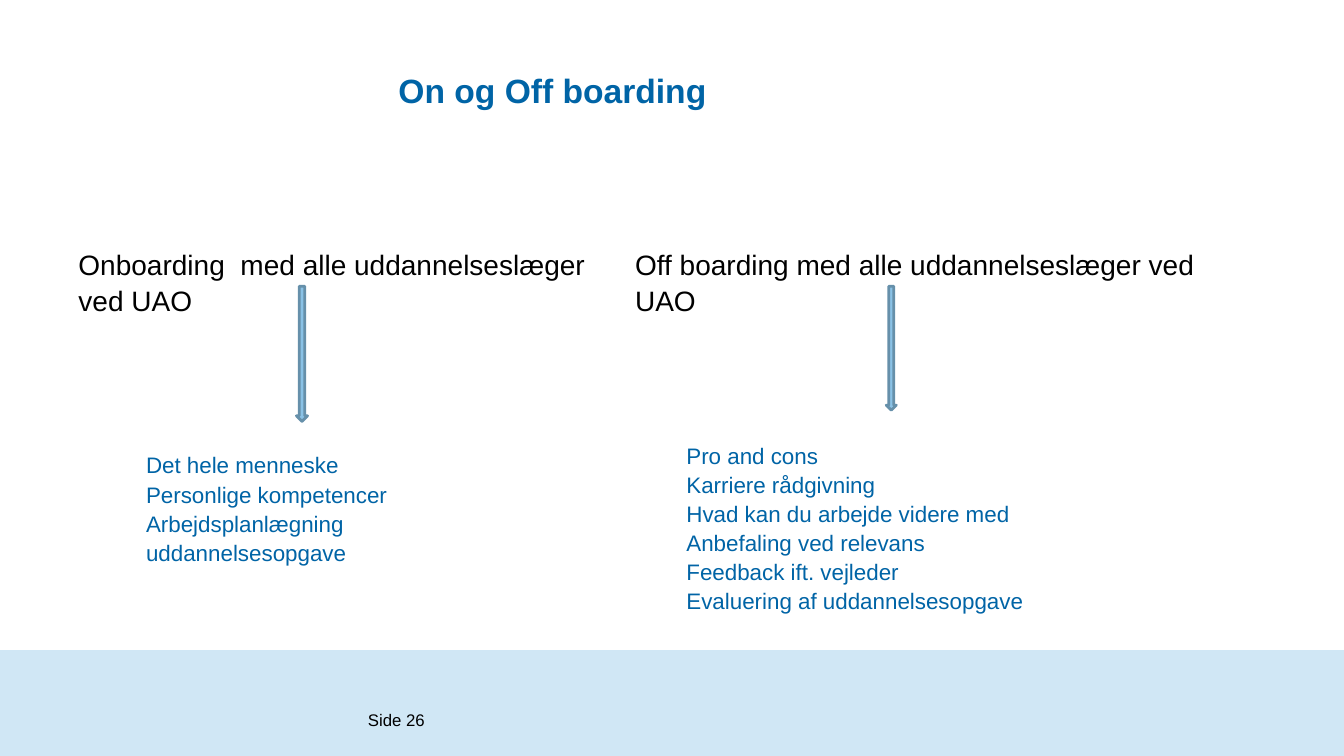
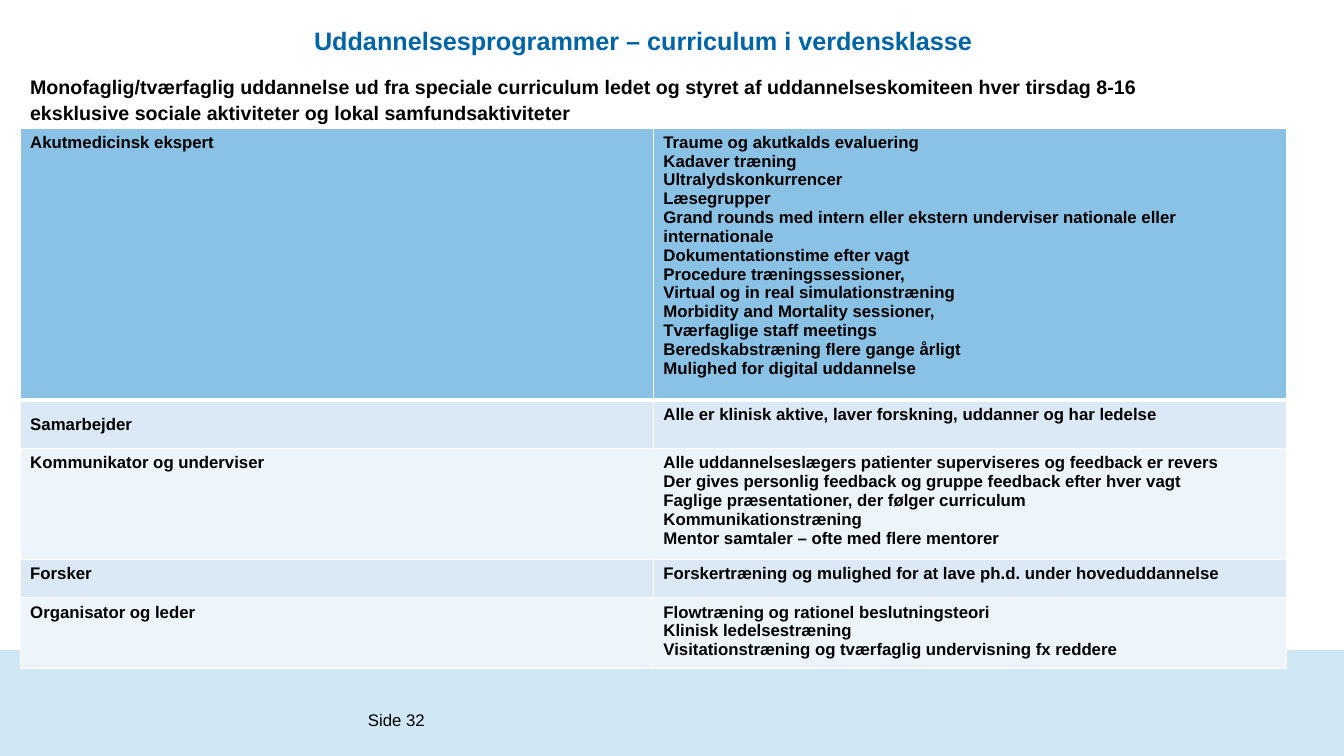
"""Build two slides on onboarding and training programmes for doctors."""
from lxml.etree import SubElement
from pptx import Presentation
from pptx.dml.color import RGBColor
from pptx.enum.shapes import MSO_SHAPE as Preset
from pptx.enum.text import MSO_ANCHOR as Anchor, PP_ALIGN as Align
from pptx.oxml import parse_xml
from pptx.oxml.ns import nsdecls, qn
from pptx.util import Emu, Pt

PX = 9144
WIDTH, HEIGHT = 1333, 750
BAND_TOP = 645


def px(length):
    """Turn a length in px into EMU."""
    return Emu(length * PX)


def color(hex_string):
    """Turn a hex string into a colour."""
    return RGBColor.from_string(hex_string)


def write(frame, text, size=12, ink="000000", bold=False, align=Align.LEFT,
          anchor=Anchor.TOP, spacing=None):
    """Fill a text frame or cell frame, one paragraph per line."""
    frame.word_wrap = True
    frame.vertical_anchor = anchor
    for index, line in enumerate(text.split("\n")):
        paragraph = frame.add_paragraph() if index else frame.paragraphs[0]
        paragraph.alignment = align
        paragraph.line_spacing = spacing
        run = paragraph.add_run()
        run.text = line
        run.font.name = Deck.FONT
        run.font.size = Pt(size)
        run.font.bold = bold
        run.font.color.rgb = color(ink)


class Deck:
    """Hold the shared style and the current slide."""

    FONT = "Arial"
    BLUE, SKY, EDGE, BAND = "0064A6", "8AC2E6", "6690AA", "D0E7F5"
    STRIPES = ("DAE9F5", "EDF4FA")
    WHITE = "FFFFFF"

    def __init__(self):
        """Start an empty presentation."""
        self.show = Presentation()
        self.show.slide_width, self.show.slide_height = px(WIDTH), px(HEIGHT)
        self.slide = None

    def new_slide(self, number):
        """Add a slide with the bottom band and its page number."""
        self.slide = self.show.slides.add_slide(self.show.slide_layouts[6])
        self.shape(Preset.RECTANGLE, 0, BAND_TOP, WIDTH, HEIGHT - BAND_TOP, self.BAND)
        self.text(f"Side {number}", 355, 704, 189, 20, anchor=Anchor.MIDDLE)

    def shape(self, preset, left, top, width, height, fill, edge=None):
        """Draw a filled preset shape, with an edge if one is given."""
        shape = self.slide.shapes.add_shape(preset, px(left), px(top), px(width), px(height))
        shape.shadow.inherit = False
        shape.fill.solid()
        shape.fill.fore_color.rgb = color(fill)
        if edge:
            shape.line.color.rgb = color(edge)
            shape.line.width = Pt(2)
        else:
            shape.line.fill.background()

    def text(self, text, left, top, width, height, **style):
        """Place a text box."""
        box = self.slide.shapes.add_textbox(px(left), px(top), px(width), px(height))
        write(box.text_frame, text, **style)

    def body(self, text, left, top, width, height, **style):
        """Place text with the looser line spacing of the body."""
        self.text(text, left, top, width, height, spacing=1.08, **style)

    def title(self, text, left, top, width, height, size):
        """Place a centred blue title."""
        self.body(text, left, top, width, height, size=size, ink=self.BLUE,
                  bold=True, align=Align.CENTER)

    def arrow(self, left, top, width, height):
        """Draw an arrow pointing down."""
        self.shape(Preset.DOWN_ARROW, left, top, width, height, self.SKY, self.EDGE)

    def borders(self, cell, top, bottom):
        """Give a cell white borders, with top and bottom widths in points."""
        properties = cell._tc.get_or_add_tcPr()
        for index, (side, width) in enumerate(
                (("L", 1), ("R", 1), ("T", top), ("B", bottom))):
            line = parse_xml(f'<a:ln{side} {nsdecls("a")} w="{Pt(width)}"/>')
            fill = SubElement(line, qn("a:solidFill"))
            SubElement(fill, qn("a:srgbClr"), val=self.WHITE)
            properties.insert(index, line)

    def table(self, rows, left, top, column_width, heights):
        """Draw a two-column table with a strong first row and striped rest."""
        frame = self.slide.shapes.add_table(
            len(rows), 2, px(left), px(top), px(2 * column_width), px(sum(heights)))
        table = frame.table
        table.first_row = table.horz_banding = False
        for column in table.columns:
            column.width = px(column_width)
        for index, (entries, height) in enumerate(zip(rows, heights)):
            table.rows[index].height = px(height)
            for cell, entry in zip(table.rows[index].cells, entries):
                write(cell.text_frame, entry, bold=True)
                cell.fill.solid()
                cell.fill.fore_color.rgb = color(
                    self.STRIPES[(index - 1) % 2] if index else self.SKY)
                self.borders(cell, 3 if index == 1 else 1, 1 if index else 3)
        return table


ONBOARDING = """Det hele menneske
Personlige kompetencer
Arbejdsplanlægning
uddannelsesopgave"""

OFFBOARDING = """Pro and cons
Karriere rådgivning
Hvad kan du arbejde videre med
Anbefaling ved relevans
Feedback ift. vejleder
Evaluering af uddannelsesopgave"""

ROLES = (
    ("Akutmedicinsk ekspert", """Traume og akutkalds evaluering
Kadaver træning
Ultralydskonkurrencer
Læsegrupper
Grand rounds med intern eller ekstern underviser nationale eller internationale
Dokumentationstime efter vagt
Procedure træningssessioner,
Virtual og in real simulationstræning
Morbidity and Mortality sessioner,
Tværfaglige staff meetings
Beredskabstræning flere gange årligt
Mulighed for digital uddannelse"""),
    ("Samarbejder", "Alle er klinisk aktive, laver forskning, uddanner og har ledelse"),
    ("Kommunikator og underviser",
     """Alle uddannelseslægers patienter superviseres og feedback er revers
Der gives personlig feedback og gruppe feedback efter hver vagt
Faglige præsentationer, der følger curriculum
Kommunikationstræning
Mentor samtaler – ofte med flere mentorer"""),
    ("Forsker", "Forskertræning og mulighed for at lave ph.d. under hoveduddannelse"),
    ("Organisator og leder", """Flowtræning og rationel beslutningsteori
Klinisk ledelsestræning
Visitationstræning og tværfaglig undervisning fx reddere"""),
)


def boarding_slide(deck):
    """Show what onboarding and offboarding talks cover."""
    deck.new_slide(26)
    deck.title("On og Off boarding", 56, 61, 984, 67, 24)
    deck.body("Onboarding  med alle uddannelseslæger ved UAO", 68, 238, 560, 80, size=20)
    deck.body("Off boarding med alle uddannelseslæger ved UAO", 620, 238, 638, 80, size=20)
    deck.arrow(294, 284, 11, 134)
    deck.arrow(879, 284, 10, 123)
    deck.body(ONBOARDING, 135, 441, 278, 118, size=16, ink=deck.BLUE)
    deck.body(OFFBOARDING, 671, 432, 397, 172, size=16, ink=deck.BLUE)


def programme_slide(deck):
    """Show the training programme for each role."""
    deck.new_slide(32)
    deck.title("Uddannelsesprogrammer – curriculum i verdensklasse", 54, 18, 1168, 38, 18)
    deck.body("Monofaglig/tværfaglig uddannelse ud fra speciale curriculum ledet og styret af "
              "uddannelseskomiteen hver tirsdag 8-16 eksklusive sociale aktiviteter og lokal "
              "samfundsaktiviteter", 20, 68, 1184, 59, size=14, bold=True)
    roles = deck.table(ROLES, 20, 127, 628, (267, 48, 103, 38, 66))
    roles.cell(1, 0).vertical_anchor = Anchor.MIDDLE


def main():
    """Build and save the presentation."""
    deck = Deck()
    boarding_slide(deck)
    programme_slide(deck)
    deck.show.save("out.pptx")


if __name__ == "__main__":
    main()
